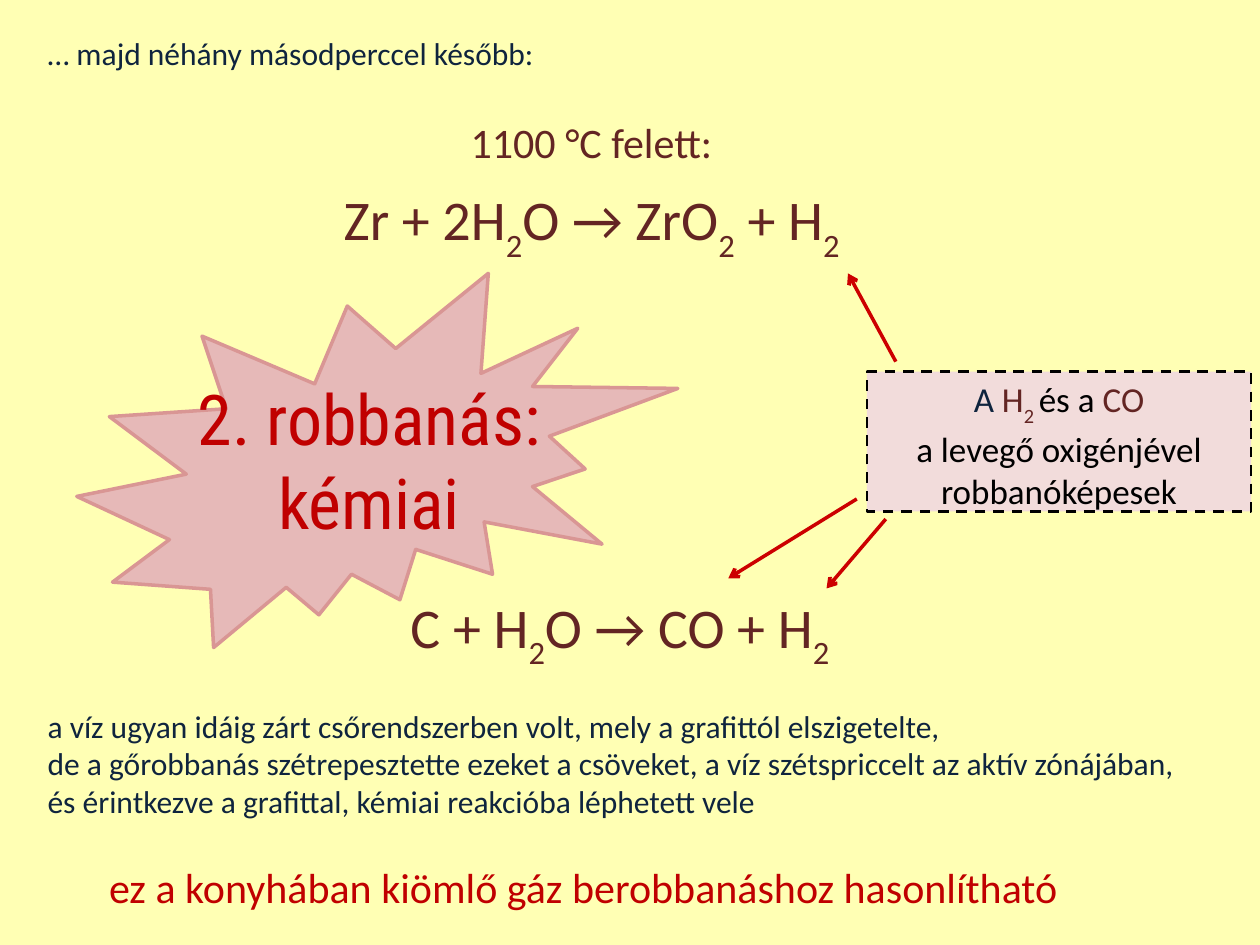
"""Build the slide on the second, chemical explosion."""
from dataclasses import dataclass

import pptx
import pptx.dml.color
import pptx.enum.dml
import pptx.enum.shapes
import pptx.enum.text
import pptx.oxml
import pptx.oxml.ns
import pptx.util

WIDTH = pptx.util.Inches(10)
HEIGHT = pptx.util.Inches(7.5)
COLORS = {
    "background": "FFFFB4", "brown": "632523", "navy": "0F243E", "red": "C00000",
    "arrow": "CC0000", "black": "000000", "note": "F2DCDB", "burst": "E6B9B8",
    "burst_edge": "D99694",
}
ALIGN = pptx.enum.text.PP_ALIGN
ANCHOR = pptx.enum.text.MSO_ANCHOR
SHAPE = pptx.enum.shapes.MSO_SHAPE


@dataclass(frozen=True)
class Area:
    """Place and size in percent of the slide."""
    left: float
    top: float
    width: float
    height: float

    def lengths(self) -> tuple[int, int, int, int]:
        """Return the place and size as lengths."""
        return (*point(self.left, self.top), *point(self.width, self.height))


@dataclass(frozen=True)
class Run:
    """Text in one colour, lowered if it is a subscript."""
    text: str
    color: str
    subscript: bool = False


@dataclass(frozen=True)
class Line:
    """Paragraph of equally large runs."""
    runs: list[Run]
    size: int
    space_before: int = 0


@dataclass(frozen=True)
class TextBlock:
    """Text box with its paragraphs."""
    area: Area
    lines: list[Line]
    align: ALIGN = ALIGN.CENTER
    wrap: bool = True
    anchor: ANCHOR = ANCHOR.TOP
    font: str = "Calibri"


@dataclass(frozen=True)
class Arrow:
    """Arrow from start to end, in percent of the slide."""
    start: tuple[float, float]
    end: tuple[float, float]


def point(x: float, y: float) -> tuple[int, int]:
    """Turn percentages of the slide into lengths."""
    return round(WIDTH * x / 100), round(HEIGHT * y / 100)


def rgb(name: str) -> pptx.dml.color.RGBColor:
    """Look up a named colour."""
    return pptx.dml.color.RGBColor.from_string(COLORS[name])


def formula(*parts: str) -> list[Run]:
    """Make runs in which every second part is a subscript."""
    return [Run(part, "brown", index % 2 == 1) for index, part in enumerate(parts)]


def write_text(shape, block: TextBlock) -> None:
    """Fill a shape with the paragraphs of a block."""
    frame = shape.text_frame
    frame.word_wrap = block.wrap
    frame.vertical_anchor = block.anchor
    frame.auto_size = pptx.enum.text.MSO_AUTO_SIZE.SHAPE_TO_FIT_TEXT
    for index, line in enumerate(block.lines):
        paragraph = frame.add_paragraph() if index else frame.paragraphs[0]
        paragraph.alignment = block.align
        paragraph.space_before = pptx.util.Pt(line.space_before)
        for item in line.runs:
            for row, text in enumerate(item.text.split("\n")):
                if row:
                    paragraph.add_line_break()
                run = paragraph.add_run()
                run.text = text
                run.font.name = block.font
                run.font.size = pptx.util.Pt(line.size)
                run.font.color.rgb = rgb(item.color)
                if item.subscript:
                    run.font._element.set("baseline", "-30000")


def add_text(slide, block: TextBlock) -> None:
    """Add a text box."""
    write_text(slide.shapes.add_textbox(*block.area.lengths()), block)


def add_figure(slide, kind: SHAPE, area: Area, fill: str, edge: str, weight: float):
    """Add a filled and outlined preset shape."""
    shape = slide.shapes.add_shape(kind, *area.lengths())
    shape.shadow.inherit = False
    shape.fill.solid()
    shape.fill.fore_color.rgb = rgb(fill)
    shape.line.color.rgb = rgb(edge)
    shape.line.width = pptx.util.Pt(weight)
    return shape


def add_arrow(slide, arrow: Arrow) -> None:
    """Add a red arrow with an open head."""
    connector = slide.shapes.add_connector(
        pptx.enum.shapes.MSO_CONNECTOR.STRAIGHT, *point(*arrow.start), *point(*arrow.end))
    connector.line.color.rgb = rgb("arrow")
    connector.line.width = pptx.util.Pt(2)
    head = pptx.oxml.parse_xml(f'<a:tailEnd {pptx.oxml.ns.nsdecls("a")} type="arrow"/>')
    connector.line._get_or_add_ln().append(head)
    effects = pptx.oxml.parse_xml(f'<a:effectLst {pptx.oxml.ns.nsdecls("a")}/>')
    connector._element.spPr.append(effects)


ZIRCONIUM = TextBlock(Area(25.6, 12.27, 42.7, 15.73), [
    Line([Run("1100 °C felett:", "brown")], 24),
    Line(formula("Zr + 2H", "2", "O → ZrO", "2", " + H", "2"), 32, 10),
], wrap=False, anchor=ANCHOR.MIDDLE)
CARBON = TextBlock(Area(29.5, 62, 39.4, 8.53), [
    Line(formula("C + H", "2", "O → CO + H", "2"), 32),
], wrap=False)
NOTE = TextBlock(Area(68.8, 39.33, 30.5, 14.8), [
    Line([Run("A", "navy"), *formula(" H", "2 "), Run("és a ", "black"), Run("CO", "brown")], 20),
    Line([Run("a levegő oxigénjével robbanóképesek", "black")], 20),
])
ARROWS = [
    Arrow((71.1, 38.27), (67.3, 28.93)),
    Arrow((70.3, 54.93), (65.6, 62.27)),
    Arrow((68, 52.8), (57.8, 61.2)),
]
BURST = Area(6.1, 28.93, 47.7, 39.6)
CAPTIONS = [
    TextBlock(Area(12.5, 39.07, 33.6, 19.33), [
        Line([Run(text, "red")], 40) for text in ("2. robbanás:", "kémiai")
    ], font="Roboto Condensed"),
    TextBlock(Area(2.8, 2.93, 92.9, 5.33), [
        Line([Run("… majd néhány másodperccel később:", "navy")], 18),
    ], align=ALIGN.LEFT),
    TextBlock(Area(7.3, 90.53, 78, 6.67), [
        Line([Run("ez a konyhában kiömlő gáz berobbanáshoz hasonlítható", "red")], 24),
    ], wrap=False),
    TextBlock(Area(2.8, 74.13, 95.3, 13.47), [
        Line([Run("a víz ugyan idáig zárt csőrendszerben volt, mely a grafittól elszigetelte,\n"
                  "de a gőrobbanás szétrepesztette ezeket a csöveket, "
                  "a víz szétspriccelt az aktív zónájában,\n"
                  "és érintkezve a grafittal, kémiai reakcióba léphetett vele", "navy")], 18),
    ], align=ALIGN.LEFT),
]


def main() -> None:
    """Build and save the presentation."""
    presentation = pptx.Presentation()
    presentation.slide_width, presentation.slide_height = WIDTH, HEIGHT
    slide = presentation.slides.add_slide(presentation.slide_layouts[6])
    slide.background.fill.solid()
    slide.background.fill.fore_color.rgb = rgb("background")
    for block in (ZIRCONIUM, CARBON):
        add_text(slide, block)
    note = add_figure(slide, SHAPE.RECTANGLE, NOTE.area, "note", "black", 1.5)
    note.line.dash_style = pptx.enum.dml.MSO_LINE.DASH
    write_text(note, NOTE)
    for arrow in ARROWS:
        add_arrow(slide, arrow)
    add_figure(slide, SHAPE.EXPLOSION2, BURST, "burst", "burst_edge", 2)
    for block in CAPTIONS:
        add_text(slide, block)
    presentation.save("out.pptx")


if __name__ == "__main__":
    main()
